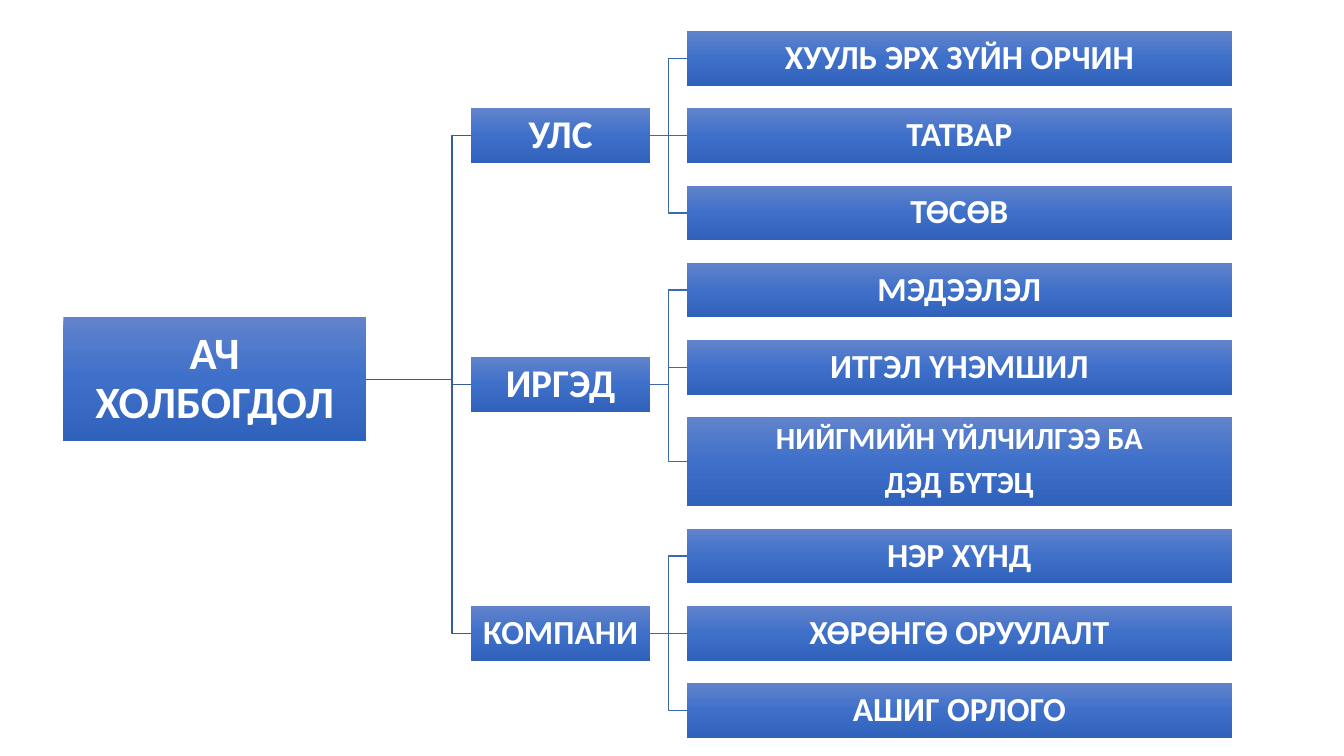
from copy import deepcopy

from lxml import etree
from pptx import Presentation
from pptx.dml.color import RGBColor
from pptx.enum.shapes import MSO_CONNECTOR, MSO_SHAPE
from pptx.enum.text import MSO_ANCHOR, PP_ALIGN
from pptx.oxml.ns import qn
from pptx.util import Inches, Pt

RECT = MSO_SHAPE.RECTANGLE
STRAIGHT, ELBOW = MSO_CONNECTOR.STRAIGHT, MSO_CONNECTOR.ELBOW
MIDDLE, CENTER = MSO_ANCHOR.MIDDLE, PP_ALIGN.CENTER
LEFT_SIDE, RIGHT_SIDE = 1, 3

COLORS = {
    "top": "6183CB",
    "middle": "3E70CA",
    "bottom": "3062BB",
    "text": "FFFFFF",
    "root_line": "365B9D",
    "leaf_line": "3E67B2",
}
ROOT = {"left": 0.63, "top": 3.15, "width": 3, "height": 1.23}
GROUP_LEFT, GROUP_WIDTH = 4.67, 1.78
LEAF_LEFT, LEAF_WIDTH = 6.81, 5.41
BOX_HEIGHT, TALL_HEIGHT = 0.54, 0.88
TREE_TOP, TREE_BOTTOM = 0.31, 7.32
ROOT_BEND = 0.82

GROUPS = [
    ("УЛС", 28, ["ХУУЛЬ ЭРХ ЗҮЙН ОРЧИН", "ТАТВАР", "ТӨСӨВ"]),
    ("ИРГЭД", 28, ["МЭДЭЭЛЭЛ", "ИТГЭЛ ҮНЭМШИЛ",
                   "НИЙГМИЙН ҮЙЛЧИЛГЭЭ БА\nДЭД БҮТЭЦ"]),
    ("КОМПАНИ", 24, ["НЭР ХҮНД", "ХӨРӨНГӨ ОРУУЛАЛТ", "АШИГ ОРЛОГО"]),
]


class TreeSlide:
    font = "Calibri"

    def __init__(self, prs):
        self.s = prs.slides.add_slide(prs.slide_layouts[6])

    def color(self, name):
        return RGBColor.from_string(COLORS[name])

    def fill_gradient(self, sp):
        """Three-stop gradient running from top to bottom."""
        sp.fill.gradient()
        sp.fill.gradient_angle = 270
        stops = sp._element.spPr.find(qn("a:gradFill")).find(qn("a:gsLst"))
        stops.append(deepcopy(stops[0]))
        names = ("top", "middle", "bottom")
        for i, (stop, name) in enumerate(zip(sp.fill.gradient_stops, names)):
            stop.position = i / 2
            stop.color.rgb = self.color(name)

    def box(self, text, size, left, top, width, height):
        sp = self.s.shapes.add_shape(
            RECT, Inches(left), Inches(top), Inches(width), Inches(height))
        sp.shadow.inherit = False
        sp.line.fill.background()
        self.fill_gradient(sp)
        tf = sp.text_frame
        tf.word_wrap = True
        tf.vertical_anchor = MIDDLE
        tf.margin_left = tf.margin_right = Inches(0.02)
        tf.margin_top = tf.margin_bottom = Inches(0.02)
        tf.text = text
        for p in tf.paragraphs:
            p.alignment = CENTER
            p.line_spacing = 0.9
            p.space_after = Pt(0.35 * size)
            for r in p.runs:
                r.font.name = self.font
                r.font.size = Pt(size)
                r.font.bold = True
                r.font.color.rgb = self.color("text")
        return sp

    def branch(self, parent, child, color, bend=0.5):
        """Join parent to child, turning at the given share of the way."""
        rise = (child.top + child.height / 2) - (parent.top + parent.height / 2)
        kind = ELBOW if abs(rise) > Inches(0.01) else STRAIGHT
        line = self.s.shapes.add_connector(kind, 0, 0, 0, 0)
        line.begin_connect(parent, RIGHT_SIDE)
        line.end_connect(child, LEFT_SIDE)
        line.line.color.rgb = self.color(color)
        line.line.width = Pt(1)
        props = line._element.spPr
        etree.SubElement(props, qn("a:effectLst"))
        if kind == ELBOW:
            geometry = props.find(qn("a:prstGeom"))
            guides = geometry.find(qn("a:avLst"))
            etree.SubElement(guides, qn("a:gd"), name="adj1",
                             fmla=f"val {round(bend * 100000)}")


def leaf_height(text):
    return TALL_HEIGHT if "\n" in text else BOX_HEIGHT


def main():
    prs = Presentation()
    prs.slide_width, prs.slide_height = Inches(13.33), Inches(7.5)
    tree = TreeSlide(prs)
    heights = [leaf_height(t) for _, _, leaves in GROUPS for t in leaves]
    gap = (TREE_BOTTOM - TREE_TOP - sum(heights)) / (len(heights) - 1)

    root = tree.box("АЧ ХОЛБОГДОЛ", 32, **ROOT)
    top = TREE_TOP
    for name, size, leaves in GROUPS:
        span = sum(map(leaf_height, leaves)) + gap * (len(leaves) - 1)
        group = tree.box(name, size, GROUP_LEFT, top + (span - BOX_HEIGHT) / 2,
                         GROUP_WIDTH, BOX_HEIGHT)
        tree.branch(root, group, "root_line", ROOT_BEND)
        for text in leaves:
            height = leaf_height(text)
            leaf = tree.box(text, 22 if "\n" in text else 24,
                            LEAF_LEFT, top, LEAF_WIDTH, height)
            tree.branch(group, leaf, "leaf_line")
            top += height + gap

    prs.save("out.pptx")


if __name__ == "__main__":
    main()
